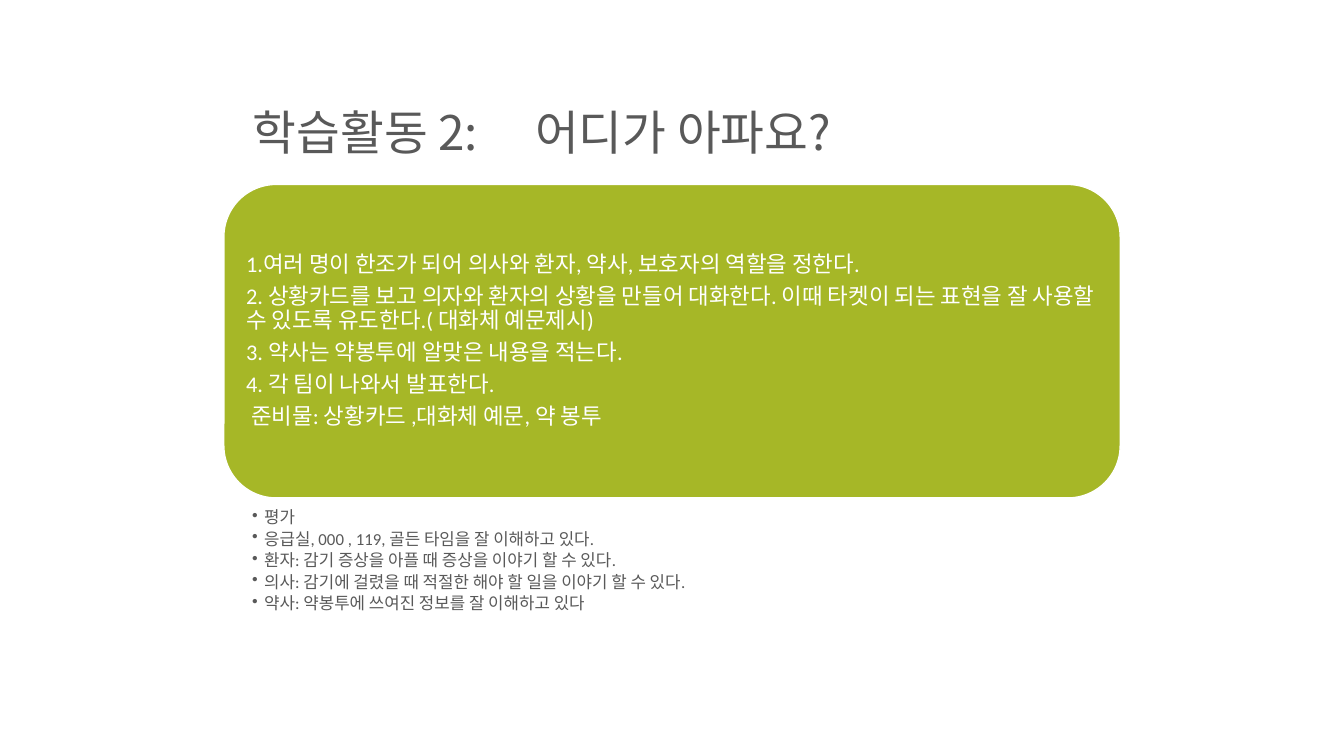
from lxml import etree
from pptx import Presentation
from pptx import util as u
from pptx.dml.color import RGBColor
from pptx.enum import shapes, text
from pptx.oxml.ns import qn

WIDE, HIGH = 13.33, 7.5
LEFT, SPAN = 2.22 / WIDE, 8.89 / WIDE
GRAY, GREEN, WHITE = "595959", "A6B727", "FFFFFF"
SANS, BODY = "Noto Sans CJK KR", "Calibri"

TITLE = "학습활동 2:\t어디가 아파요?"
STEPS = [
    "1.여러 명이 한조가 되어 의사와 환자, 약사, 보호자의 역할을 정한다.",
    "2. 상황카드를 보고 의자와 환자의 상황을 만들어 대화한다. 이때 타켓이 되는 표현을 잘 사용할 수 있도록 유도한다.( 대화체 예문제시)",
    "3. 약사는 약봉투에 알맞은 내용을 적는다.",
    "4. 각 팀이 나와서 발표한다.",
    "준비물: 상황카드 ,대화체 예문, 약 봉투",
]
GOALS = [
    "평가",
    "응급실, 000 , 119, 골든 타임을 잘 이해하고 있다.",
    "환자: 감기 증상을 아플 때 증상을 이야기 할 수 있다.",
    "의사: 감기에 걸렸을 때 적절한 해야 할 일을 이야기 할 수 있다.",
    "약사: 약봉투에 쓰여진 정보를 잘 이해하고 있다",
]


def color(code):
    return RGBColor.from_string(code)


def place(x, y, w, h):
    return [u.Inches(n) for n in (x * WIDE, y * HIGH, w * WIDE, h * HIGH)]


def indent(para, left, first=0):
    props = para._p.get_or_add_pPr()
    props.set("marL", str(u.Inches(left)))
    props.set("indent", str(u.Inches(first)))
    return props


def bullet(para):
    props = indent(para, 0.12, -0.12)
    etree.SubElement(props, qn("a:buChar")).set("char", "•")


def tab(para, pos):
    stops = etree.SubElement(para._p.get_or_add_pPr(), qn("a:tabLst"))
    stop = etree.SubElement(stops, qn("a:tab"))
    stop.set("pos", str(u.Inches(pos)))
    stop.set("algn", "l")


def write(shape, lines, size, tone, face=BODY, after=0, pads=(0.1, 0.05, 0.1, 0.05),
          anchor=text.MSO_ANCHOR.TOP, mark=None):
    frame = shape.text_frame
    frame.word_wrap = True
    frame.vertical_anchor = anchor
    (frame.margin_left, frame.margin_top,
     frame.margin_right, frame.margin_bottom) = map(u.Inches, pads)
    for i, line in enumerate(lines):
        para = frame.add_paragraph() if i else frame.paragraphs[0]
        para.text = line
        para.alignment = text.PP_ALIGN.LEFT
        para.line_spacing = 0.9
        para.space_after = u.Pt(after)
        if mark:
            mark(para)
        para.font.size = u.Pt(size)
        para.font.name = face
        para.font.color.rgb = color(tone)
    return frame


def panel(slide, box, fill, edge):
    shape = slide.shapes.add_shape(shapes.MSO_SHAPE.ROUNDED_RECTANGLE, *box)
    shape.shadow.inherit = False
    shape.fill.solid()
    shape.fill.fore_color.rgb = color(fill)
    shape.line.color.rgb = color(edge)
    shape.line.width = u.Pt(1)
    return shape


def main():
    deck = Presentation()
    deck.slide_width, deck.slide_height = u.Inches(WIDE), u.Inches(HIGH)
    slide = deck.slides.add_slide(deck.slide_layouts[6])

    head = slide.shapes.add_textbox(*place(2.41 / WIDE, 0.33 / HIGH, 10.25 / WIDE, 1.31 / HIGH))
    write(head, [TITLE], 34, GRAY, SANS, anchor=text.MSO_ANCHOR.BOTTOM,
          mark=lambda para: tab(para, 2.8))

    card = panel(slide, place(LEFT, 1.83 / HIGH, SPAN, 3.11 / HIGH), GREEN, WHITE)
    steps = write(card, STEPS, 16, WHITE, after=5.6, pads=(0.07,) * 4,
                  anchor=text.MSO_ANCHOR.MIDDLE)
    indent(steps.paragraphs[-1], 0.05)

    goals = slide.shapes.add_textbox(*place(LEFT, 5.03 / HIGH, SPAN, 1.59 / HIGH))
    write(goals, GOALS, 12, GRAY, after=2.4, pads=(0.28, 0.02, 0.12, 0.02), mark=bullet)

    deck.save("out.pptx")


if __name__ == "__main__":
    main()
